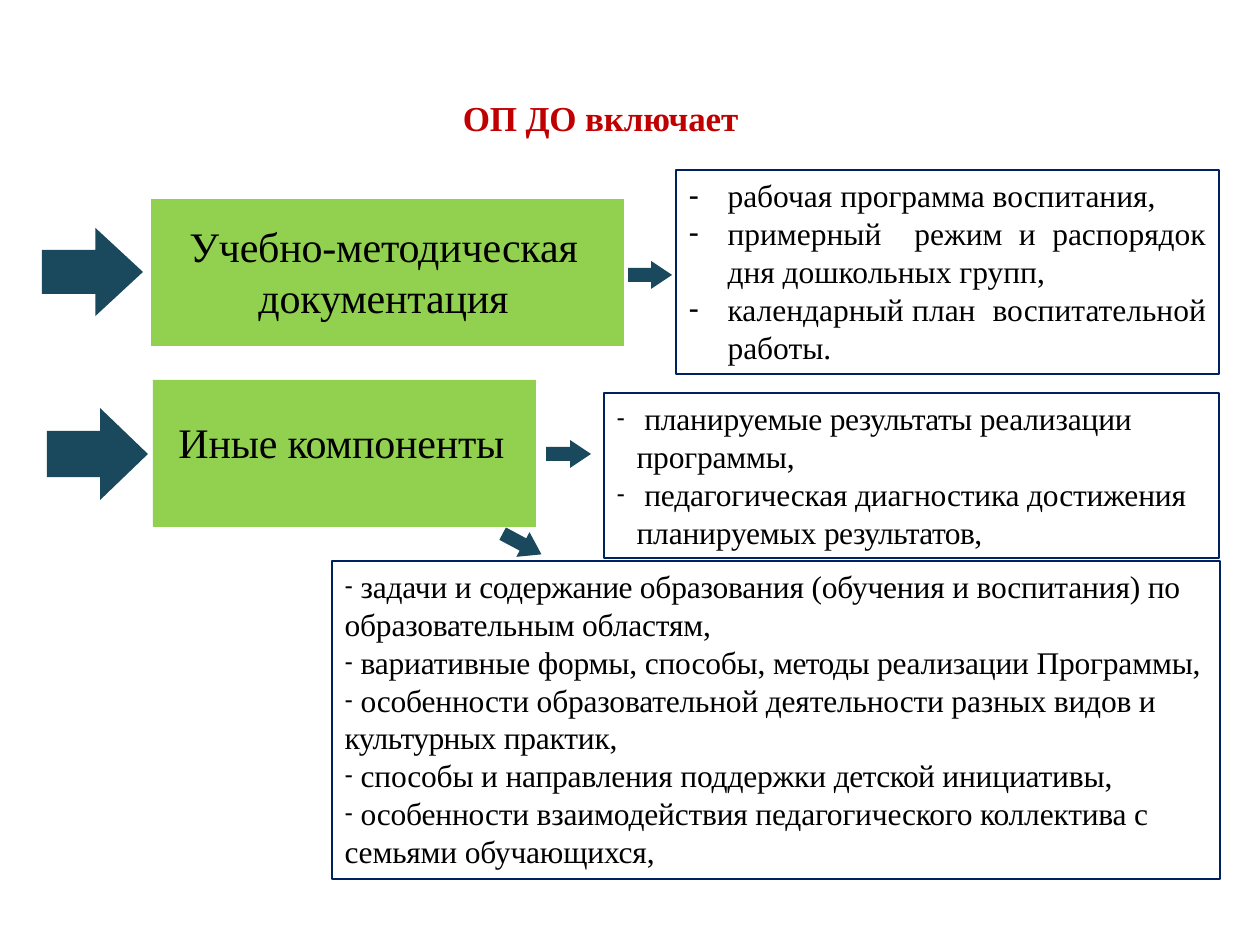
import pptx
import pptx.util
import pptx.dml.color
import pptx.enum.shapes
import pptx.enum.text
import pptx.oxml.ns
import lxml.etree

Pt = pptx.util.Pt
ALIGN = pptx.enum.text.PP_ALIGN
KIND = pptx.enum.shapes.MSO_SHAPE

THEME = {
    "font": "Times New Roman",
    "red": "C00000", "black": "000000", "green": "92D050",
    "teal": "1A495D", "navy": "002060",
    "title": 20, "label": 24, "list": 18, "line": 0.75,
    "normal": -10, "tight": -30,
}

# Content: boxes are left, top, width, height in px; |words| are set tighter
TITLE = ("ОП ДО включает", (218, 95, 765, 44))
LABELS = [
    ("Учебно-методическая документация", (151, 199, 473, 147), (175, 220, 417, 103)),
    ("Иные компоненты", (153, 380, 383, 147), (170, 416, 343, 53)),
]
LISTS = [
    {"box": (676, 170, 543, 204), "indent": 39, "hang": 39, "bullet": 100,
     "align": ALIGN.JUSTIFY, "track": False, "items": [
         "рабочая программа воспитания,",
         "примерный  режим и распорядок дня дошкольных групп,",
         "календарный план  воспитательной работы."]},
    {"box": (604, 393, 615, 165), "indent": 20, "hang": 20, "bullet": 80,
     "align": ALIGN.LEFT, "track": True, "items": [
         " планируемые |результаты |реализации программы,",
         " педагогическая диагностика достижения планируемых |результатов,|"]},
    {"box": (332, 561, 888, 318), "indent": 0, "hang": 0, "bullet": 80,
     "align": ALIGN.LEFT, "track": True, "items": [
         " задачи и |содержание |образования (обучения и воспитания) по образовательным областям,",
         " вариативные формы, способы, |методы |реализации Программы,",
         " особенности образовательной деятельности разных видов и |культурных |практик,",
         " способы и направления поддержки |детской |инициативы,",
         " особенности взаимодействия педагогического коллектива с семьями обучающихся|,|"]},
]
# Arrows: box, head length relative to height, turn in degrees
ARROWS = [
    ((42, 228, 101, 88), 0.54, 0),
    ((47, 408, 101, 92), 0.52, 0),
    ((628, 261, 44, 28), 0.75, 0),
    ((546, 440, 45, 28), 0.75, 0),
    ((500, 530, 44, 28), 0.75, 28.1),
]


def px(n):
    return round(n * 914400 / 126)


def color(name):
    return pptx.dml.color.RGBColor.from_string(THEME[name])


def place(shape, box):
    for name, n in zip(("left", "top", "width", "height"), box):
        setattr(shape, name, px(n))


def assign(thing, values):
    for name, value in values.items():
        setattr(thing, name, value)


def frame(shape, inset=None):
    text = shape.text_frame
    assign(text, {"word_wrap": True, "auto_size": pptx.enum.text.MSO_AUTO_SIZE.NONE,
                  "vertical_anchor": pptx.enum.text.MSO_ANCHOR.TOP})
    if inset is not None:
        assign(text, dict.fromkeys(("margin_left", "margin_right", "margin_bottom"), 0))
        text.margin_top = px(inset)
    return text


def write(para, words, size, tone="black", bold=False, track=True):
    for n, part in enumerate(words.split("|")):
        if part:
            run = para.add_run()
            run.text = part
            assign(run.font, {"name": THEME["font"], "size": Pt(THEME[size]), "bold": bold})
            run.font.color.rgb = color(tone)
            if track:
                run.font._element.set("spc", str(THEME["tight" if n % 2 else "normal"]))


def heading(shape, words, box, size, **style):
    place(shape, box)
    para = frame(shape, 1).paragraphs[0]
    assign(para, {"alignment": ALIGN.CENTER, "space_before": Pt(1), "line_spacing": 1.0})
    write(para, words, size, **style)


def dash(para, data):
    props = para._p.get_or_add_pPr()
    props.set("marL", str(px(data["indent"])))
    props.set("indent", str(-px(data["hang"])))
    for tag, key, value in (("a:buSzPct", "val", str(data["bullet"] * 1000)),
                            ("a:buChar", "char", "-")):
        lxml.etree.SubElement(props, pptx.oxml.ns.qn(tag)).set(key, value)


def fill(shape, tone):
    shape.shadow.inherit = False
    shape.fill.solid()
    shape.fill.fore_color.rgb = color(tone)
    shape.line.fill.background()


deck = pptx.Presentation()
assign(deck, {"slide_width": px(1260), "slide_height": px(945)})
slide = deck.slides.add_slide(deck.slide_layouts[4])
shapes = slide.shapes

# Title
heading(shapes.title, *TITLE, "title", tone="red", bold=True)

# Green labels
for words, box, area in LABELS:
    fill(shapes.add_shape(KIND.RECTANGLE, *map(px, box)), "green")
    heading(shapes.add_textbox(0, 0, 0, 0), words, area, "label")

# Outlined lists
bodies = [item for item in slide.placeholders if item.placeholder_format.idx in (1, 2, 3, 4)]
for body, data in zip(bodies, LISTS):
    place(body, data["box"])
    body.line.color.rgb = color("navy")
    body.line.width = Pt(THEME["line"])
    text = frame(body)
    for n, words in enumerate(data["items"]):
        para = text.add_paragraph() if n else text.paragraphs[0]
        assign(para, {"alignment": data["align"], "space_before": Pt(0), "line_spacing": 1.0})
        dash(para, data)
        write(para, words, "list", track=data["track"])
for spare in bodies[len(LISTS):]:
    spare._element.getparent().remove(spare._element)

# Arrows
for box, head, turn in ARROWS:
    arrow = shapes.add_shape(KIND.RIGHT_ARROW, *map(px, box))
    arrow.adjustments[0] = 0.5
    arrow.adjustments[1] = head
    arrow.rotation = turn
    fill(arrow, "teal")

deck.save("out.pptx")
